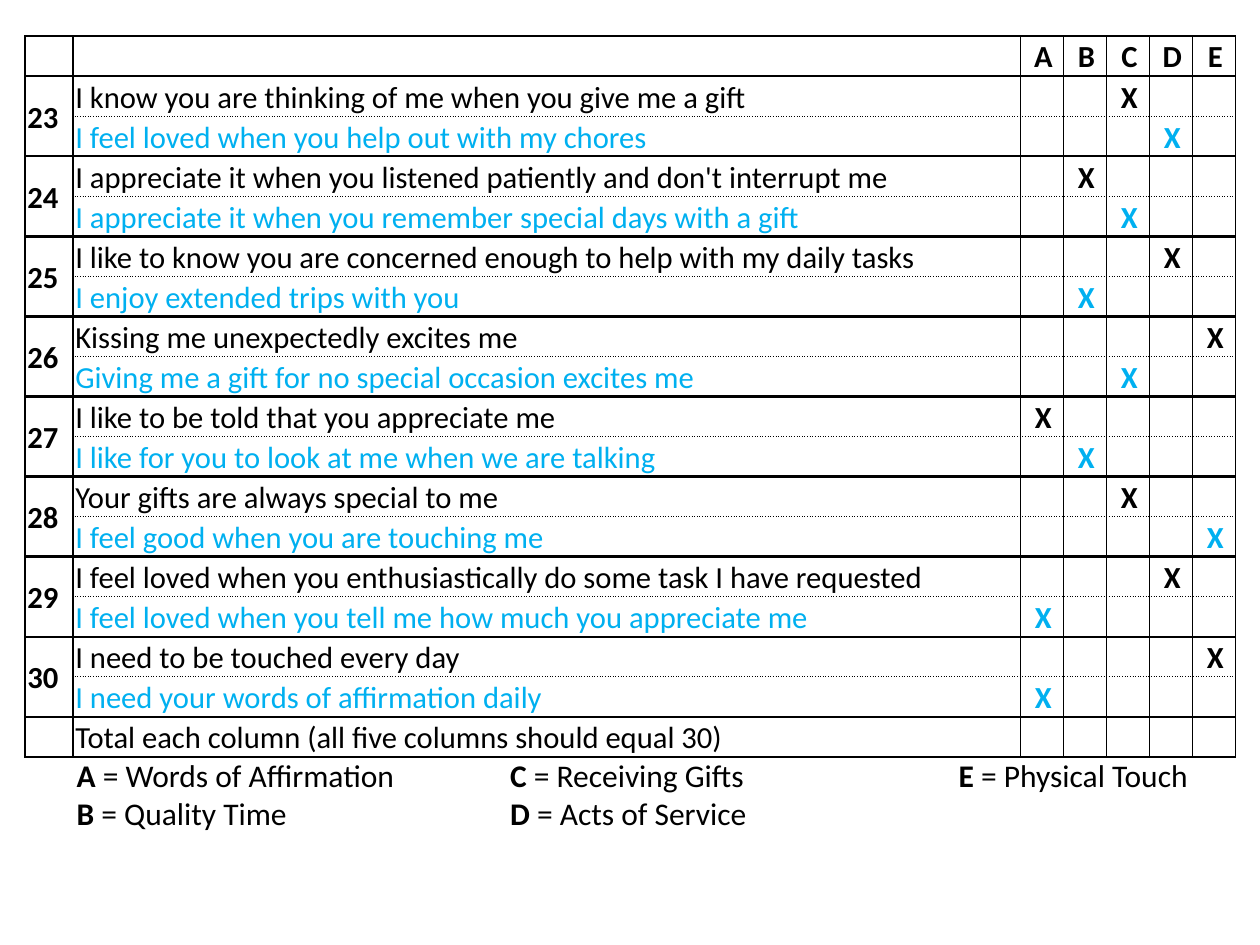
from lxml.etree import SubElement
from pptx import Presentation
from pptx.dml.color import RGBColor
from pptx.enum.text import MSO_ANCHOR, PP_ALIGN
from pptx.oxml.ns import qn
from pptx.util import Pt

BLACK, BLUE = "000000", "00B0F0"
LETTERS = "ABCDE"
FIRST_NUMBER = 23
ROW_HEIGHT = 22.9
COLUMN_WIDTHS = [27.4, 541.6] + [24.6] * 5

# Two statements per question, each with the column it scores in
STATEMENTS = [
    ("I know you are thinking of me when you give me a gift", "C"),
    ("I feel loved when you help out with my chores", "D"),
    ("I appreciate it when you listened patiently and don't interrupt me", "B"),
    ("I appreciate it when you remember special days with a gift", "C"),
    ("I like to know you are concerned enough to help with my daily tasks", "D"),
    ("I enjoy extended trips with you", "B"),
    ("Kissing me unexpectedly excites me", "E"),
    ("Giving me a gift for no special occasion excites me", "C"),
    ("I like to be told that you appreciate me", "A"),
    ("I like for you to look at me when we are talking", "B"),
    ("Your gifts are always special to me", "C"),
    ("I feel good when you are touching me", "E"),
    ("I feel loved when you enthusiastically do some task I have requested", "D"),
    ("I feel loved when you tell me how much you appreciate me", "A"),
    ("I need to be touched every day", "E"),
    ("I need your words of affirmation daily", "A"),
]


def color(hex_string):
    return RGBColor.from_string(hex_string)


def add_border(cell, side, width, dash="solid"):
    line = SubElement(cell._tc.get_or_add_tcPr(), qn(f"a:ln{side}"), w=str(Pt(width)))
    fill = SubElement(line, qn("a:solidFill"))
    SubElement(fill, qn("a:srgbClr"), val=BLACK)
    SubElement(line, qn("a:prstDash"), val=dash)


presentation = Presentation()
presentation.slide_width, presentation.slide_height = Pt(720), Pt(540)
slide = presentation.slides.add_slide(presentation.slide_layouts[6])

# Table contents: header, statements, total
rows = [["", "", *LETTERS]]
for index, (statement, answer) in enumerate(STATEMENTS):
    number = "" if index % 2 else str(FIRST_NUMBER + index // 2)
    marks = ["X" if letter == answer else "" for letter in LETTERS]
    rows.append([number, statement, *marks])
rows.append(["", "Total each column (all five columns should equal 30)"] + [""] * 5)

# Score table
table = slide.shapes.add_table(
    len(rows), len(COLUMN_WIDTHS), Pt(14.2), Pt(20.7),
    Pt(sum(COLUMN_WIDTHS)), Pt(ROW_HEIGHT * len(rows))).table
table.first_row = table.horz_banding = False
for column, width in zip(table.columns, COLUMN_WIDTHS):
    column.width = Pt(width)

for row_index, values in enumerate(rows):
    table.rows[row_index].height = Pt(ROW_HEIGHT)
    in_question = 0 < row_index <= len(STATEMENTS)
    first_of_pair = in_question and row_index % 2 == 1
    second_of_pair = in_question and not first_of_pair
    for column_index, value in enumerate(values):
        cell = table.cell(row_index, column_index)
        cell.margin_left = Pt(1.5)
        cell.margin_right = cell.margin_top = cell.margin_bottom = 0
        cell.vertical_anchor = MSO_ANCHOR.MIDDLE if row_index else MSO_ANCHOR.TOP

        # Dotted rule between the two statements of a question
        add_border(cell, "L", 1)
        add_border(cell, "R", 1)
        for side, inner in (("T", second_of_pair), ("B", first_of_pair)):
            if inner and column_index:
                add_border(cell, side, 1, "sysDot")
            else:
                add_border(cell, side, 1.5)
        cell.fill.background()

        cell.text = value
        paragraph = cell.text_frame.paragraphs[0]
        paragraph.line_spacing = 1.07
        paragraph.space_after = Pt(8)
        paragraph.alignment = PP_ALIGN.CENTER if column_index > 1 else PP_ALIGN.LEFT
        paragraph.font.name = "Calibri"
        paragraph.font.size = Pt(17.5)
        paragraph.font.bold = column_index != 1
        paragraph.font.color.rgb = color(BLUE if second_of_pair else BLACK)
    if first_of_pair:
        table.cell(row_index, 0).merge(table.cell(row_index + 1, 0))

# Legend in tabbed columns
legend = slide.shapes.add_textbox(Pt(36.7), Pt(428.4), Pt(663), Pt(72.7))
legend.text_frame.word_wrap = True
paragraph = legend.text_frame.paragraphs[0]
paragraph.font.name = "Calibri"
paragraph.font.size = Pt(18)
paragraph.font.color.rgb = color(BLACK)
tab_list = SubElement(paragraph._p.get_or_add_pPr(), qn("a:tabLst"))
paragraph._p.pPr.insert(0, tab_list)
for position in (247.7, 504):
    SubElement(tab_list, qn("a:tab"), pos=str(Pt(position)), algn="l")

legend_lines = [
    [("A", "Words of Affirmation"), ("C", "Receiving Gifts"), ("E", "Physical Touch")],
    [("B", "Quality Time"), ("D", "Acts of Service")],
]
for line_index, entries in enumerate(legend_lines):
    if line_index:
        paragraph.add_line_break()
    for entry_index, (letter, meaning) in enumerate(entries):
        run = paragraph.add_run()
        run.text = letter
        run.font.bold = True
        tab = "\t" if entry_index < len(entries) - 1 else ""
        paragraph.add_run().text = f" = {meaning}{tab}"

presentation.save("out.pptx")
